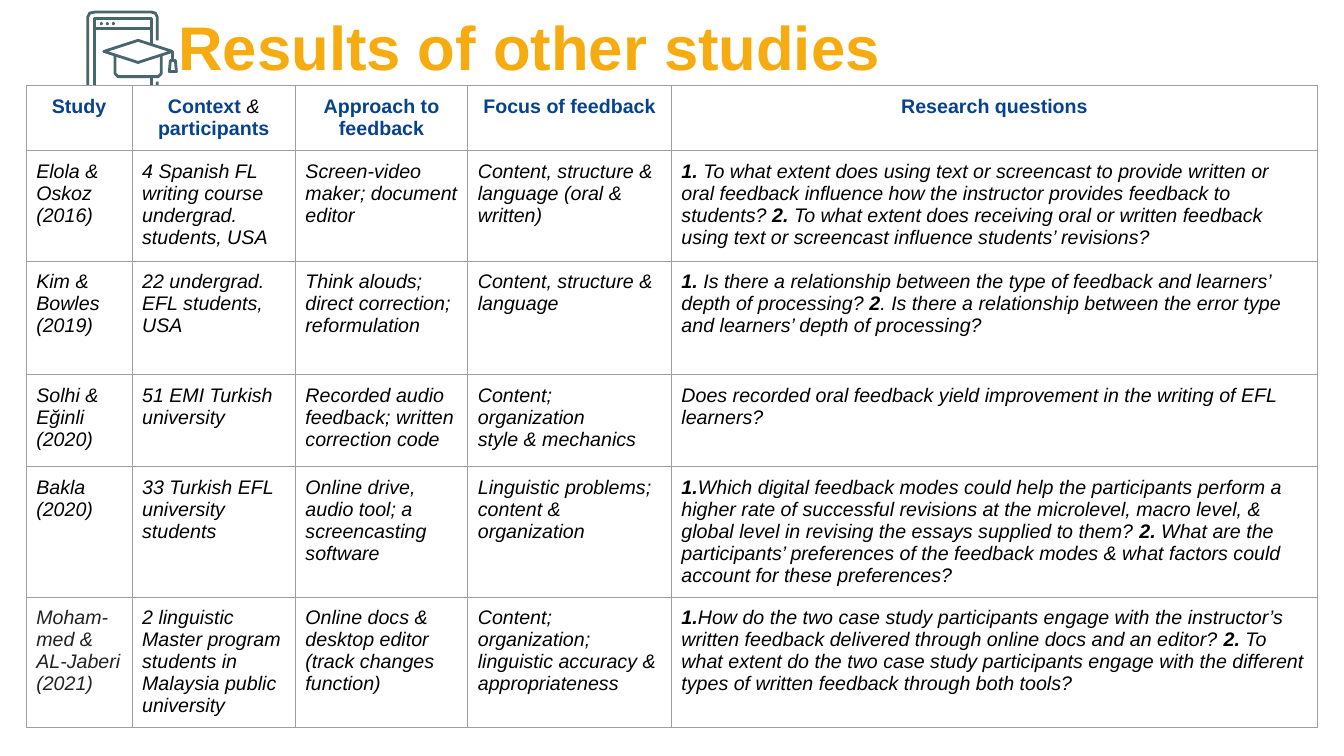
"""Build a slide that tabulates the results of other feedback studies."""
from lxml import etree
from pptx import Presentation
from pptx.dml.color import RGBColor
from pptx.enum.shapes import MSO_SHAPE
from pptx.enum.text import MSO_ANCHOR, MSO_AUTO_SIZE, PP_ALIGN
from pptx.oxml.ns import qn
from pptx.util import Inches, Pt

CENTER, LEFT = PP_ALIGN.CENTER, PP_ALIGN.LEFT
BOTTOM, FIXED = MSO_ANCHOR.BOTTOM, MSO_AUTO_SIZE.NONE
OVAL = MSO_SHAPE.OVAL
GOLD = RGBColor(0xF6, 0xAC, 0x10)
BLUE = RGBColor(0x07, 0x42, 0x8C)
TEAL = RGBColor(0x47, 0x66, 0x6D)
GREY = RGBColor(0x9E, 0x9E, 0x9E)
DARK = RGBColor(0x22, 0x22, 0x22)
BLACK = RGBColor(0, 0, 0)
WHITE = RGBColor(255, 255, 255)
FONT = "Arial"

TITLE = "Results of other studies"
HEADS = ["*Study*", "*Context *& *participants*", "*Approach to feedback*",
         "*Focus of feedback*", "*Research questions*"]
STUDIES = [
    ["Elola & Oskoz (2016)",
     "4 Spanish FL writing course undergrad. students, USA",
     "Screen-video\nmaker; document editor",
     "Content, structure & language (oral & written)",
     "*1.* To what extent does using text or screencast to provide written or "
     "oral feedback influence how the instructor provides feedback to students? "
     "*2. *To what extent does receiving oral or written feedback using text or "
     "screencast influence students’ revisions?"],
    ["Kim & Bowles (2019)",
     "22 undergrad. EFL students, USA",
     "Think alouds; direct correction; reformulation",
     "Content, structure & language",
     "*1.* Is there a relationship between the type of feedback and learners’ "
     "depth of processing? *2*. Is there a relationship between the error type "
     "and learners’ depth of processing?"],
    ["Solhi & Eğinli (2020)",
     "51 EMI Turkish university",
     "Recorded audio feedback; written correction code",
     "Content; organization\nstyle & mechanics",
     "Does recorded oral feedback yield improvement in the writing of EFL "
     "learners?"],
    ["Bakla (2020)",
     "33 Turkish EFL university students",
     "Online drive, audio tool; a screencasting software",
     "Linguistic problems; content & organization",
     "*1.*Which digital feedback modes could help the participants perform a "
     "higher rate of successful revisions at the microlevel, macro level, & "
     "global level in revising the essays supplied to them?* 2.* What are the "
     "participants’ preferences of the feedback modes & what factors could "
     "account for these preferences?"],
    ["Moham-\nmed & AL-Jaberi (2021)",
     "2 linguistic Master program students in Malaysia public university",
     "Online docs & desktop editor (track changes function)",
     "Content; organization; linguistic accuracy & appropriateness",
     "*1.*How do the two case study participants engage with the instructor’s "
     "written feedback delivered through online docs and an editor? *2.* To "
     "what extent do the two case study participants engage with the different "
     "types of written feedback through both tools?"],
]
WIDTHS = [1.05, 1.62, 1.71, 2.02, 6.41]
HEIGHTS = [0.64, 1.1, 1.13, 0.91, 1.29, 1.29]

TABLET = [(1.56, 0.4), (1.56, 0.17), (1.54, 0.13), (1.5, 0.12), (0.94, 0.12),
          (0.89, 0.13), (0.87, 0.17), (0.87, 0.97), (0.89, 1.01), (0.94, 1.02),
          (1.5, 1.02), (1.54, 1.01), (1.56, 0.97), (1.56, 0.81)]
SCREEN = [(0.94, 0.18), (1.5, 0.18), (1.5, 0.91), (0.94, 0.91)]
BAR = [(0.94, 0.28), (1.5, 0.28)]
BASE = [(1.14, 0.54), (1.6, 0.54), (1.6, 0.73), (1.57, 0.76),
        (1.17, 0.76), (1.14, 0.73)]
CAP = [(1.03, 0.51), (1.34, 0.41), (1.37, 0.4), (1.4, 0.41),
       (1.71, 0.51), (1.4, 0.61), (1.37, 0.62), (1.34, 0.61)]
CORD = [(1.71, 0.51), (1.71, 0.59)]
TASSEL = [(1.69, 0.6), (1.74, 0.6), (1.75, 0.71), (1.68, 0.71)]
ICON = [(TABLET, False), (SCREEN, True), (BAR, False), (BASE, True),
        (CAP, True), (CORD, False), (TASSEL, True)]
DOTS = [0.99, 1.05, 1.11]


def add_title(slide):
    box = slide.shapes.title
    box.left, box.top = Inches(1.67), Inches(-0.01)
    box.width, box.height = Inches(10.62), Inches(0.94)
    box.fill.solid()
    box.fill.fore_color.rgb = WHITE
    frame = box.text_frame
    frame.text = TITLE
    frame.auto_size = FIXED
    frame.vertical_anchor = BOTTOM
    frame.margin_left = frame.margin_right = Inches(0.1)
    frame.margin_top = frame.margin_bottom = Inches(0.1)
    para = frame.paragraphs[0]
    para.alignment, para.line_spacing = LEFT, 0.9
    font = para.font
    font.name, font.size, font.bold = FONT, Pt(44), True
    font.color.rgb = GOLD


def add_icon(slide):
    for points, closed in ICON:
        spots = [(Inches(x), Inches(y)) for x, y in points]
        path = slide.shapes.build_freeform(*spots[0])
        path.add_line_segments(spots[1:], close=closed)
        part = path.convert_to_shape()
        part.shadow.inherit = False
        if closed:
            part.fill.solid()
            part.fill.fore_color.rgb = WHITE
        else:
            part.fill.background()
        part.line.color.rgb = TEAL
        part.line.width = Pt(2)
    for x in DOTS:
        dot = slide.shapes.add_shape(OVAL, Inches(x), Inches(0.22),
                                     Inches(0.03), Inches(0.03))
        dot.shadow.inherit = False
        dot.fill.solid()
        dot.fill.fore_color.rgb = TEAL
        dot.line.fill.background()


def add_edges(cell):
    props = cell._tc.get_or_add_tcPr()
    for side in ("a:lnL", "a:lnR", "a:lnT", "a:lnB"):
        line = etree.SubElement(props, qn(side), w=str(Pt(0.75)))
        fill = etree.SubElement(line, qn("a:solidFill"))
        etree.SubElement(fill, qn("a:srgbClr"), val=str(GREY))


def fill_cell(cell, text, head, color):
    add_edges(cell)
    cell.fill.solid()
    cell.fill.fore_color.rgb = WHITE
    cell.margin_left = cell.margin_right = Inches(0.1)
    cell.margin_top = cell.margin_bottom = Inches(0.1)
    frame = cell.text_frame
    for i, line in enumerate(text.split("\n")):
        para = frame.add_paragraph() if i else frame.paragraphs[0]
        para.alignment = CENTER if head else LEFT
        para.font.name, para.font.size = FONT, Pt(14)
        for j, piece in enumerate(line.split("*")):
            if piece:
                bold = j % 2 == 1
                run = para.add_run()
                run.text = piece
                run.font.bold = bold
                run.font.italic = not (head and bold)
                run.font.color.rgb = BLUE if head and bold else color


def add_grid(slide):
    rows = [HEADS] + STUDIES
    frame = slide.shapes.add_table(
        len(rows), len(HEADS), Inches(0.26), Inches(0.85),
        Inches(sum(WIDTHS)), Inches(sum(HEIGHTS)))
    table = frame.table
    table.first_row = table.horz_banding = False
    for col, width in zip(table.columns, WIDTHS):
        col.width = Inches(width)
    for row, height in zip(table.rows, HEIGHTS):
        row.height = Inches(height)
    for r, texts in enumerate(rows):
        for c, text in enumerate(texts):
            last = r == len(STUDIES) and c == 0
            fill_cell(table.cell(r, c), text, r == 0, DARK if last else BLACK)


def main():
    deck = Presentation()
    deck.slide_width, deck.slide_height = Inches(13.33), Inches(7.5)
    slide = deck.slides.add_slide(deck.slide_layouts[5])
    add_title(slide)
    add_icon(slide)
    add_grid(slide)
    deck.save("out.pptx")


if __name__ == "__main__":
    main()
